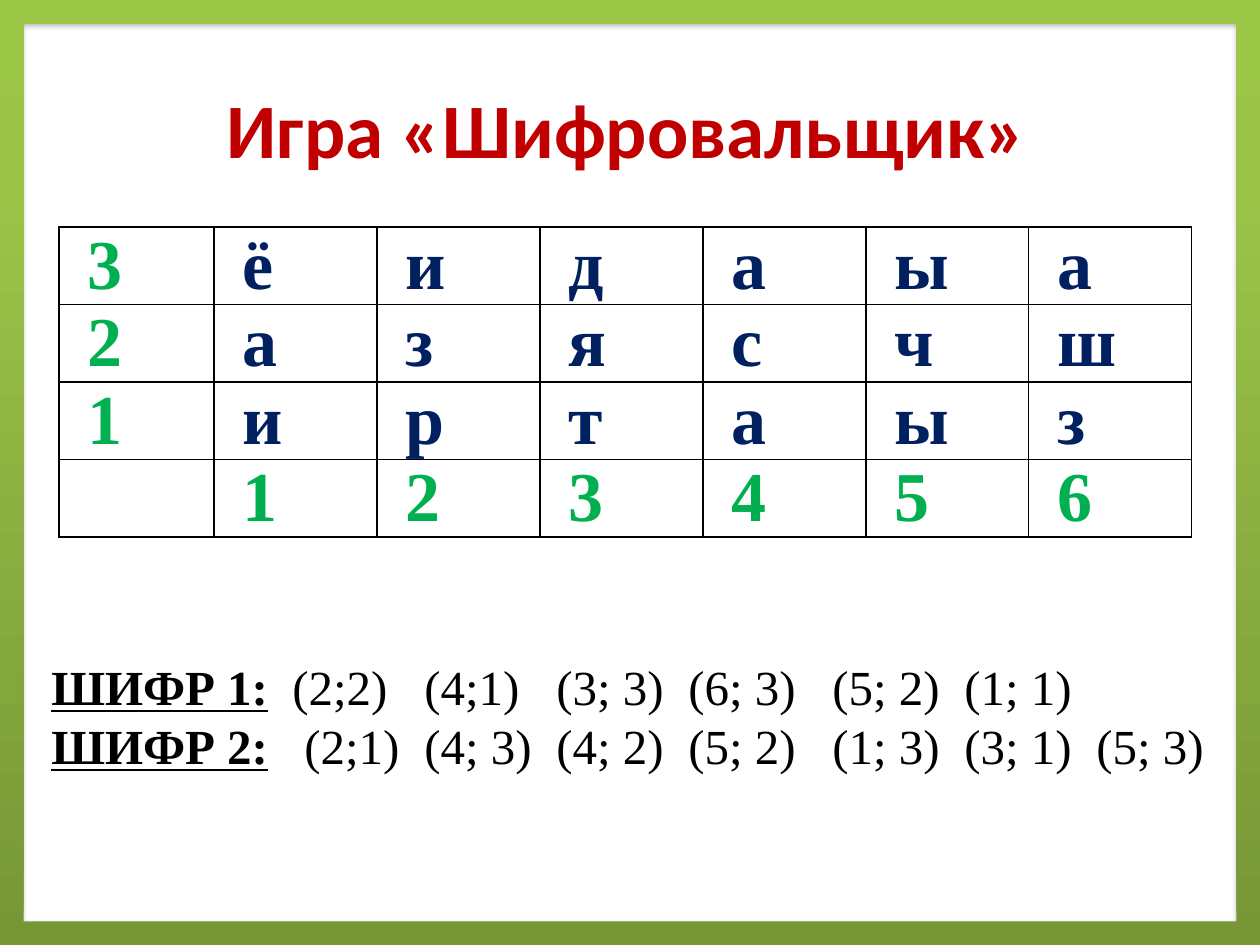
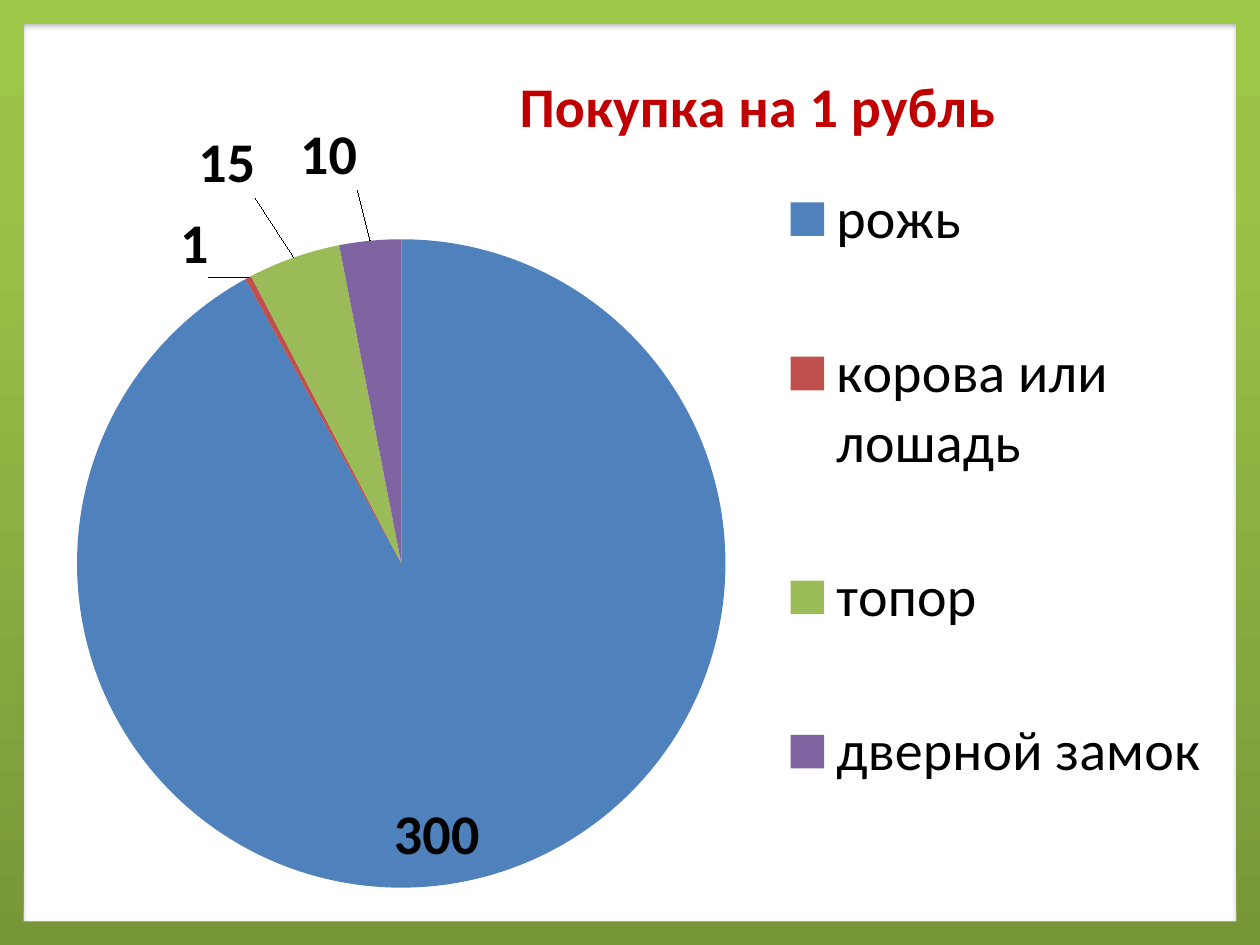
from pptx import Presentation
from pptx import util as u
from pptx.chart import data as cd
from pptx.dml import color
from pptx.enum import chart as ch, shapes, text
from pptx.oxml import parse_xml
from pptx.oxml import ns

RED, NAVY, GREEN, BLACK = "C00000", "002060", "00B050", "000000"
SANS, SERIF = "Calibri", "Times New Roman"
SLICES = ["4F81BD", "C0504D", "9BBB59", "8064A2"]
STOPS = [(0, "779737"), (80, "9BC348"), (100, "9DC746")]


def px(n):
    return u.Emu(round(n * 914400 / 126))


def rgb(hue):
    return color.RGBColor.from_string(hue)


def style(font, size, hue, face, bold=False):
    font.size, font.name, font.bold = u.Pt(size), face, bold
    font.color.rgb = rgb(hue)


def node(xml):
    """Parse an XML fragment whose root carries the namespace marker NS."""
    return parse_xml(xml.replace("NS", ns.nsdecls("a", "c"), 1))


# Shared background frame, kept on the slide master
def frame(deck, slide):
    box = slide.shapes.add_shape(shapes.MSO_SHAPE.FRAME, 0, 0,
                                 deck.slide_width, deck.slide_height)
    box.adjustments[0] = 0.025
    stops = "".join(f'<a:gs pos="{pos * 1000}"><a:srgbClr val="{hue}"/></a:gs>'
                    for pos, hue in STOPS)
    props = box.element.spPr
    props.insert(2, node(f'<a:gradFill NS><a:gsLst>{stops}</a:gsLst>'
                         '<a:lin ang="16200000" scaled="0"/></a:gradFill>'))
    box.line.fill.background()
    box.shadow.inherit = False
    props.find(ns.qn("a:effectLst")).append(node(
        '<a:outerShdw NS blurRad="39370" dist="22860" dir="5400000">'
        '<a:srgbClr val="000000"><a:alpha val="35000"/></a:srgbClr>'
        '</a:outerShdw>'))
    deck.slide_master.shapes.element.insert(2, box.element)


def title(slide, words, left, top, wide, high):
    box = slide.shapes.title
    box.left, box.top, box.width, box.height = map(px, (left, top, wide, high))
    frm = box.text_frame
    frm.text = words
    frm.vertical_anchor = text.MSO_ANCHOR.MIDDLE
    para = frm.paragraphs[0]
    para.alignment = text.PP_ALIGN.CENTER
    style(para.font, 44, RED, SANS, True)


# Letter grid with green row and column numbers
def border(cell):
    props = cell._tc.get_or_add_tcPr()
    for i, side in enumerate(("lnL", "lnR", "lnT", "lnB")):
        props.insert(i, node(
            f'<a:{side} NS w="12700"><a:solidFill><a:srgbClr val="{BLACK}"/>'
            f'</a:solidFill></a:{side}>'))


def grid(slide, rows, left, top, first, wide, high):
    count = len(rows[0])
    table = slide.shapes.add_table(
        len(rows), count, px(left), px(top),
        px(first + wide * (count - 1)), px(high * len(rows))).table
    table.first_row = table.horz_banding = False
    for c, col in enumerate(table.columns):
        col.width = px(wide if c else first)
    for r, row in enumerate(rows):
        table.rows[r].height = px(high)
        for c, sign in enumerate(row):
            cell = table.cell(r, c)
            cell.fill.background()
            border(cell)
            cell.margin_left, cell.margin_right = px(29), px(31)
            cell.margin_top = cell.margin_bottom = 0
            if sign.strip():
                cell.text = sign
                hue = GREEN if sign.isdigit() else NAVY
                style(cell.text_frame.paragraphs[0].font, 40, hue, SERIF, True)


# Cipher lines: number pairs stand on tab stops
def codes(slide, lines, left, top, wide, high):
    frm = slide.shapes.add_textbox(*map(px, (left, top, wide, high))).text_frame
    frm.word_wrap = True
    frm.vertical_anchor = text.MSO_ANCHOR.MIDDLE
    for i, (label, start, pairs) in enumerate(lines):
        para = frm.add_paragraph() if i else frm.paragraphs[0]
        style(para.font, 28, BLACK, SERIF)
        head = para.add_run()
        head.text = label
        head.font.bold = head.font.underline = True
        para.add_run().text = "\t" + "\t".join(pairs)
        tabs = "".join(f'<a:tab pos="{px(at)}" algn="l"/>'
                       for at in (start, 373, 505, 637, 781, 913, 1045))
        props = para._p.get_or_add_pPr()
        props.insert(0, node(f'<a:tabLst NS>{tabs}</a:tabLst>'))


# Manual chart layout, in fractions of the chart box
def place(part, after, inner=False, edge=True, **spots):
    for old in part.findall(ns.qn("c:layout")):
        part.remove(old)
    marks = '<c:layoutTarget val="inner"/>' if inner else ""
    if edge:
        marks += '<c:xMode val="edge"/><c:yMode val="edge"/>'
    marks += "".join(f'<c:{k} val="{v}"/>' for k, v in spots.items())
    spot = node(f'<c:layout NS><c:manualLayout>{marks}</c:manualLayout></c:layout>')
    prior = part.find(ns.qn(after)) if after else None
    part.insert(0 if prior is None else part.index(prior) + 1, spot)


def pie(slide, words, items, left, top, wide, high):
    data = cd.CategoryChartData()
    data.categories = list(items)
    data.add_series("Series 1", list(items.values()))
    chart = slide.shapes.add_chart(ch.XL_CHART_TYPE.PIE, px(left), px(top),
                                   px(wide), px(high), data).chart
    style(chart.font, 10, BLACK, SANS)
    root = chart.element

    # Title, legend and plot area
    chart.has_title = True
    chart.chart_title.text_frame.text = words
    style(chart.chart_title.text_frame.paragraphs[0].font, 32, RED, SANS, True)
    chart.has_legend = True
    chart.legend.position = ch.XL_LEGEND_POSITION.RIGHT
    chart.legend.include_in_layout = False
    style(chart.legend.font, 32, BLACK, SANS)
    place(root.xpath("//c:title")[0], "c:tx", x=0.4, y=0.02)
    place(root.xpath("//c:legend")[0], "c:legendPos",
          x=0.62, y=0.07, w=0.37, h=0.89)
    place(root.xpath("//c:plotArea")[0], None, inner=True,
          x=0.04, y=0.23, w=0.54, h=0.75)

    # Slices and their values
    plot = chart.plots[0]
    plot.vary_by_categories = True
    row = plot.series[0]
    row.data_labels.show_value = True
    style(row.data_labels.font, 32, BLACK, SANS, True)
    where = ch.XL_LABEL_POSITION
    for i, hue in enumerate(SLICES):
        point = row.points[i]
        point.format.fill.solid()
        point.format.fill.fore_color.rgb = rgb(hue)
        style(point.data_label.font, 32, BLACK, SANS, True)
        point.data_label.position = where.OUTSIDE_END if i else where.INSIDE_END
    shifts = [(-0.03, 0.01), (-0.03, -0.06), (-0.01, -0.05)]
    for label, (x, y) in zip(root.xpath("//c:dLbl")[1:], shifts):
        place(label, "c:idx", edge=False, x=x, y=y)


def main():
    deck = Presentation()
    deck.slide_width, deck.slide_height = px(1260), px(945)

    game = deck.slides.add_slide(deck.slide_layouts[5])
    frame(deck, game)
    title(game, "Игра «Шифровальщик» ", 69, 49, 1134, 158)
    grid(game, ["3ёидаыа", "2азясчш", "1иртаыз", " 123456"],
         59, 227, 155, 163, 77)
    codes(game, [
        ("ШИФР 1:", 241,
         ["(2;2)", "(4;1)", "(3; 3)", "(6; 3)", "(5; 2)", "(1; 1)"]),
        ("ШИФР 2:", 253,
         ["(2;1)", "(4; 3)", "(4; 2)", "(5; 2)", "(1; 3)", "(3; 1)", "(5; 3)"]),
    ], 39, 650, 1191, 131)

    shop = deck.slides.add_slide(deck.slide_layouts[6])
    pie(shop, "Покупка на 1 рубль",
        {"рожь": 300, "корова или лошадь": 1, "топор": 15, "дверной замок": 10},
        29, 39, 1201, 867)
    deck.save("out.pptx")


if __name__ == "__main__":
    main()
